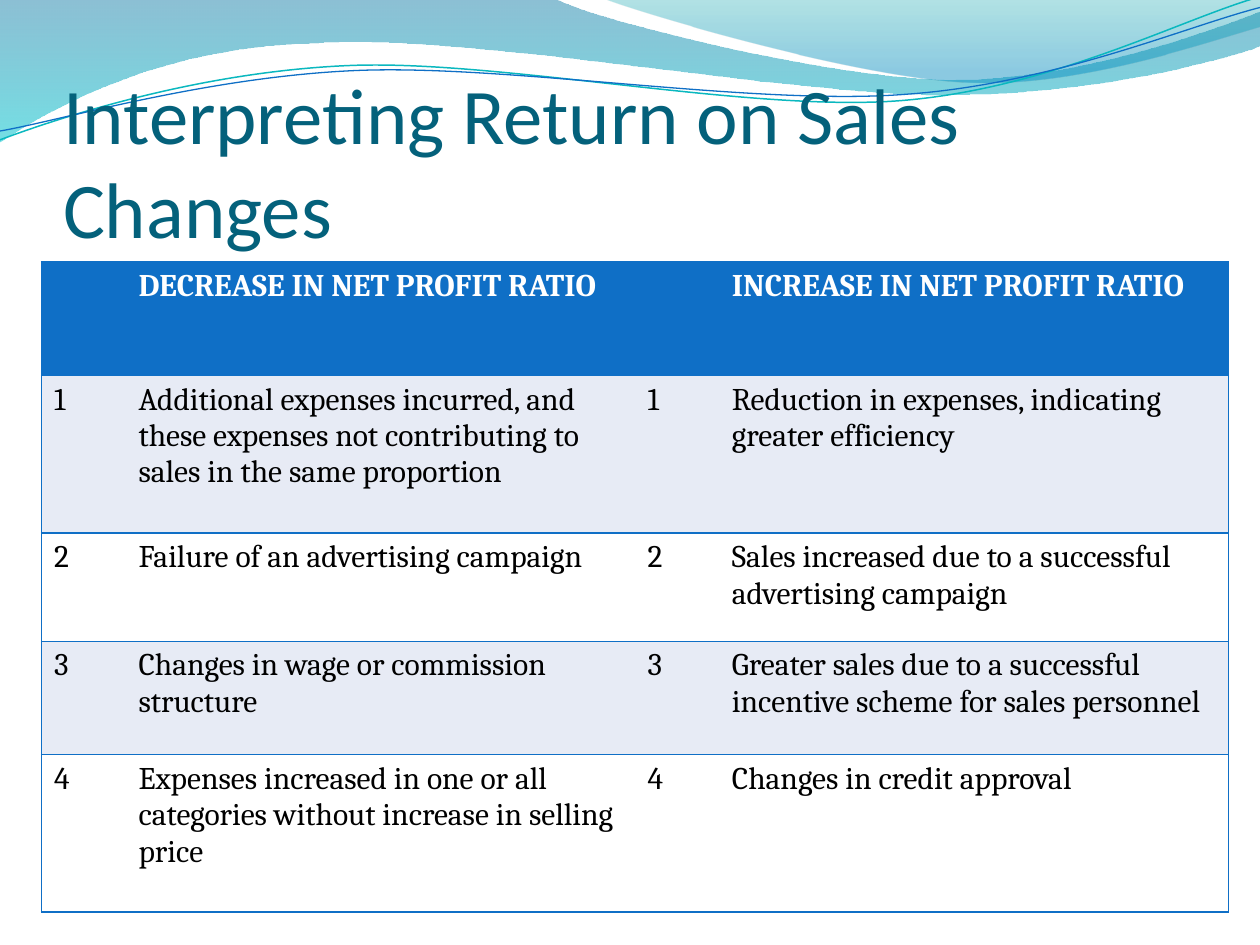
from lxml.etree import SubElement
from math import cos, radians, sin
from pptx import Presentation
from pptx.dml.color import RGBColor
from pptx.enum.text import MSO_ANCHOR, PP_ALIGN
from pptx.oxml.ns import qn
from pptx.util import Inches, Pt

WIDE, HIGH = 10, 7.5
TILT = 2.7
TITLE = "Interpreting Return on Sales Changes"
HEADS = ("DECREASE IN NET PROFIT RATIO", "INCREASE IN NET PROFIT RATIO")
PAIRS = [
    ("Additional expenses incurred, and these expenses not contributing to sales in the same proportion",
     "Reduction in expenses, indicating greater efficiency"),
    ("Failure of an advertising campaign",
     "Sales increased due to a successful advertising campaign"),
    ("Changes in wage or commission structure",
     "Greater sales due to a successful incentive scheme for sales personnel"),
    ("Expenses increased in one or all categories without increase in selling price",
     "Changes in credit approval"),
]
COLS = (0.67, 4.04) * 2
ROWS = (0.9, 1.25, 0.86, 0.9, 1.25)
HUES = {"title": "04617B", "blue": "0F6FC6", "teal": "0AB8BF",
        "band": "E7EBF5", "white": "FFFFFF", "black": "000000"}
PLAIN = "{2D5ABB26-0587-4C30-8999-92F81FD0307C}"

WAVES = [
    {"path": [(0, 0), (4.4, -0.01), (4.76, 0.17, 6.64, 0.63, 7.58, 0.63),
              (8.53, 0.63, 9.58, 0.26, 10, 0.09), (10.01, 0.36),
              (9.83, 0.44, 8.7, 0.76, 7.46, 0.75), (6.22, 0.75, 3.82, 0.28, 2.57, 0.34),
              (1.29, 0.36, 0.46, 0.83, -0.01, 1.13)],
     "stops": [(0, "0074A1", 45), (1, "00C6CF", 55)]},
    {"path": [(4.79, -0.01), (5.09, 0.11, 6.82, 0.62, 7.69, 0.65),
              (8.56, 0.69, 9.61, 0.32, 10, 0.21), (10, 0)],
     "stops": [(0, "00A1A9", 30), (0.8, "008BBF", 45)]},
    {"path": [(0, 1.11), (0.48, 0.93, 1.58, 0.57, 2.77, 0.52),
              (3.95, 0.47, 5.93, 0.89, 7.13, 0.8), (8.33, 0.71, 9.38, 0.15, 9.98, -0.02)],
     "line": ("teal", 0.85), "hub": (4.99, 0.57)},
    {"path": [(0, 1.04), (0.47, 0.96, 1.64, 0.61, 2.83, 0.56),
              (4.03, 0.51, 5.97, 0.84, 7.17, 0.75), (8.36, 0.67, 9.41, 0.21, 10, 0.06)],
     "line": ("blue", 0.75), "hub": (5, 0.59)},
]


def rgb(name):
    return RGBColor.from_string(HUES.get(name, name))


def style(item, values):
    for key, value in values.items():
        setattr(item, key, value)


def turn(spot, hub):
    across, down = spot[0] - hub[0], spot[1] - hub[1]
    s, c = sin(radians(TILT)), cos(radians(TILT))
    return hub[0] + across * c - down * s, hub[1] + across * s + down * c


def bend(shape, parts):
    lines = iter(list(shape.element.iter(qn("a:lnTo"))))
    for part in parts:
        group = [next(lines) for _ in range(len(part) // 2)]
        if len(group) == 3:
            first = group[0]
            curve = first.getparent().makeelement(qn("a:cubicBezTo"))
            first.addprevious(curve)
            for line in group:
                curve.append(line[0])
                line.getparent().remove(line)


def add_wave(slide, wave):
    spots = [part[i:i + 2] for part in wave["path"] for i in range(0, len(part), 2)]
    if "hub" in wave:
        spots = [turn(spot, wave["hub"]) for spot in spots]
    spots = [(Inches(x), Inches(y)) for x, y in spots]
    pen = slide.shapes.build_freeform(*spots[0])
    pen.add_line_segments(spots[1:], close="stops" in wave)
    shape = pen.convert_to_shape()
    bend(shape, wave["path"][1:])
    shape.shadow.inherit = False
    if "line" in wave:
        name, width = wave["line"]
        shape.rotation = 360 - TILT
        shape.fill.background()
        shape.line.color.rgb = rgb(name)
        shape.line.width = Pt(width)
        return
    shape.line.fill.background()
    shape.fill.gradient()
    shape.fill.gradient_angle = 270
    for stop, (place, hue, _) in zip(shape.fill.gradient_stops, wave["stops"]):
        stop.position = place
        stop.color.rgb = rgb(hue)
    for tint, (_, _, alpha) in zip(shape.element.iter(qn("a:srgbClr")), wave["stops"]):
        SubElement(tint, qn("a:alpha"), val=str(alpha * 1000))


def add_edge(cell, side):
    props = cell._tc.get_or_add_tcPr()
    edge = SubElement(props, qn("a:ln" + side), w=str(Pt(1)))
    fill = SubElement(edge, qn("a:solidFill"))
    SubElement(fill, qn("a:srgbClr"), val=HUES["blue"])


def add_title(slide):
    title = slide.shapes.title
    slide.shapes.element.append(title.element)
    style(title, {"left": Inches(0.5), "top": Inches(0.77),
                  "width": Inches(9), "height": Inches(1.25)})
    style(title.text_frame, {"text": TITLE, "word_wrap": True,
                             "vertical_anchor": MSO_ANCHOR.BOTTOM,
                             "margin_left": 0, "margin_right": 0,
                             "margin_top": Inches(0.05), "margin_bottom": 0})
    para = title.text_frame.paragraphs[0]
    para.alignment = PP_ALIGN.LEFT
    style(para.runs[0].font, {"size": Pt(45), "name": "Calibri"})
    para.runs[0].font.color.rgb = rgb("title")


def add_grid(slide):
    cells = [("", HEADS[0], "", HEADS[1])]
    cells += [(str(n), left, str(n), right) for n, (left, right) in enumerate(PAIRS, 1)]
    frame = slide.shapes.add_table(len(ROWS), len(COLS), Inches(0.33), Inches(2.08),
                                   Inches(sum(COLS)), Inches(sum(ROWS)))
    table = frame.table
    table._tbl.tblPr.find(qn("a:tableStyleId")).text = PLAIN
    for col, width in zip(table.columns, COLS):
        col.width = Inches(width)
    for r, (row, height) in enumerate(zip(table.rows, ROWS)):
        row.height = Inches(height)
        back = "blue" if r == 0 else ("white", "band")[r % 2]
        for c, cell in enumerate(row.cells):
            if cells[r][c]:
                cell.text = cells[r][c]
                font = cell.text_frame.paragraphs[0].runs[0].font
                style(font, {"size": Pt(18), "name": "Cambria", "bold": r == 0})
                font.color.rgb = rgb("black" if r else "white")
            sides = ("L" if c == 0 else "") + ("R" if c == len(COLS) - 1 else "") + "TB"
            for side in sides:
                add_edge(cell, side)
            cell.fill.solid()
            cell.fill.fore_color.rgb = rgb(back)


def main():
    deck = Presentation()
    style(deck, {"slide_width": Inches(WIDE), "slide_height": Inches(HIGH)})
    slide = deck.slides.add_slide(deck.slide_layouts[5])
    for wave in WAVES:
        add_wave(slide, wave)
    add_title(slide)
    add_grid(slide)
    deck.save("out.pptx")


if __name__ == "__main__":
    main()
